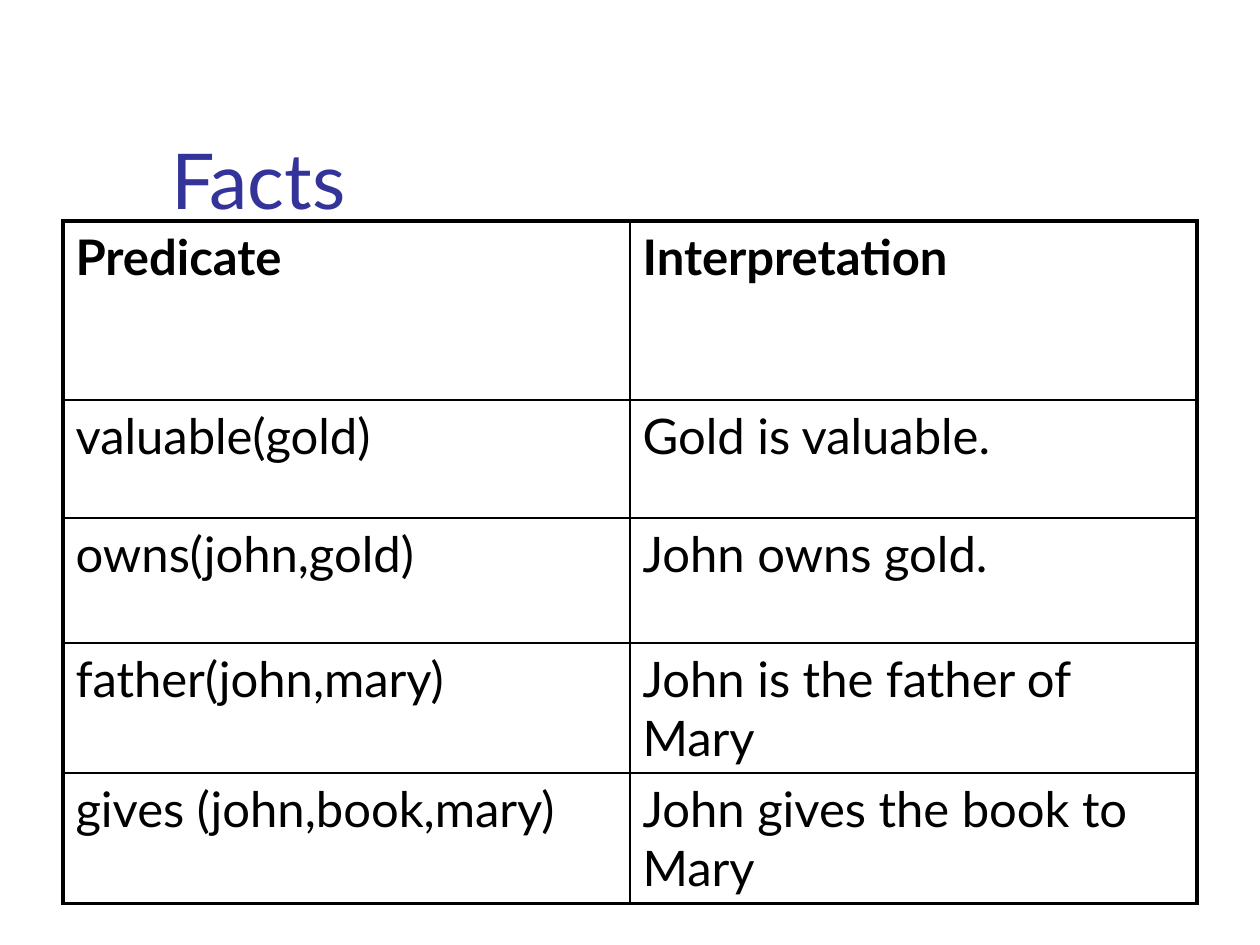
from dataclasses import dataclass

from lxml.etree import SubElement
from pptx import Presentation
from pptx.dml.color import RGBColor
from pptx.enum.text import MSO_ANCHOR, MSO_AUTO_SIZE, PP_ALIGN
from pptx.oxml.ns import qn
from pptx.util import Emu, Pt

TITLE = "Facts"
ROWS = [
    ("Predicate", "Interpretation"),
    ("valuable(gold)", "Gold is valuable."),
    ("owns(john,gold)", "John owns gold."),
    ("father(john,mary)", "John is the father of Mary"),
    ("gives (john,book,mary)", "John gives the book to Mary"),
]
SLIDE_SIZE = (1260, 945)
TITLE_BOX = (159, 29, 1073, 202)
TABLE_ORIGIN = (63, 221)
COLUMN_WIDTHS = [567, 567]
ROW_HEIGHTS = [179, 118, 125, 125, 125]


@dataclass(frozen=True)
class Theme:
    font: str = "Lato"
    title_color: str = "333399"
    text_color: str = "000000"
    border_color: str = "000000"
    title_size: int = 44
    body_size: int = 28
    outer_border: float = 2.25
    inner_border: float = 1
    space_before: int = 20


THEME = Theme()


def px(value):
    return Emu(value * 914400 // 126)


def style(p, size, color, bold=False):
    p.alignment = PP_ALIGN.LEFT
    p.font.name = THEME.font
    p.font.size = Pt(size)
    p.font.bold = bold
    p.font.color.rgb = RGBColor.from_string(color)


def add_border(cell, side, width):
    tc_pr = cell._tc.get_or_add_tcPr()
    line = SubElement(tc_pr, qn(f"a:ln{side}"), w=str(Pt(width)))
    fill = SubElement(line, qn("a:solidFill"))
    SubElement(fill, qn("a:srgbClr"), val=THEME.border_color)


def set_space_before(p, percent):
    p.space_before = Pt(0)
    spacing = p._p.pPr.find(qn("a:spcBef"))
    spacing.clear()
    SubElement(spacing, qn("a:spcPct"), val=str(percent * 1000))


def add_title(s):
    title = s.shapes.title
    title.left, title.top, title.width, title.height = map(px, TITLE_BOX)
    tf = title.text_frame
    tf.text = TITLE
    tf.auto_size = MSO_AUTO_SIZE.NONE
    tf.vertical_anchor = MSO_ANCHOR.BOTTOM
    style(tf.paragraphs[0], THEME.title_size, THEME.title_color)


def fill_cell(cell, text, row, col):
    cell.text = text
    p = cell.text_frame.paragraphs[0]
    style(p, THEME.body_size, THEME.text_color, bold=row == 0)
    set_space_before(p, THEME.space_before)
    outer_sides = {
        "L": col == 0,
        "R": col == len(COLUMN_WIDTHS) - 1,
        "T": row == 0,
        "B": row == len(ROWS) - 1,
    }
    for side, outer in outer_sides.items():
        add_border(cell, side, THEME.outer_border if outer else THEME.inner_border)
    cell.fill.background()


def add_facts_table(s):
    size = (sum(COLUMN_WIDTHS), sum(ROW_HEIGHTS))
    frame = s.shapes.add_table(
        len(ROWS), len(COLUMN_WIDTHS), *map(px, TABLE_ORIGIN + size)
    )
    table = frame.table
    table.first_row = table.horz_banding = False
    for column, width in zip(table.columns, COLUMN_WIDTHS):
        column.width = px(width)
    for row, (texts, height) in enumerate(zip(ROWS, ROW_HEIGHTS)):
        table.rows[row].height = px(height)
        for col, text in enumerate(texts):
            fill_cell(table.cell(row, col), text, row, col)


def main():
    prs = Presentation()
    prs.slide_width, prs.slide_height = map(px, SLIDE_SIZE)
    s = prs.slides.add_slide(prs.slide_layouts.get_by_name("Title Only"))
    add_title(s)
    add_facts_table(s)
    prs.save("out.pptx")


if __name__ == "__main__":
    main()
